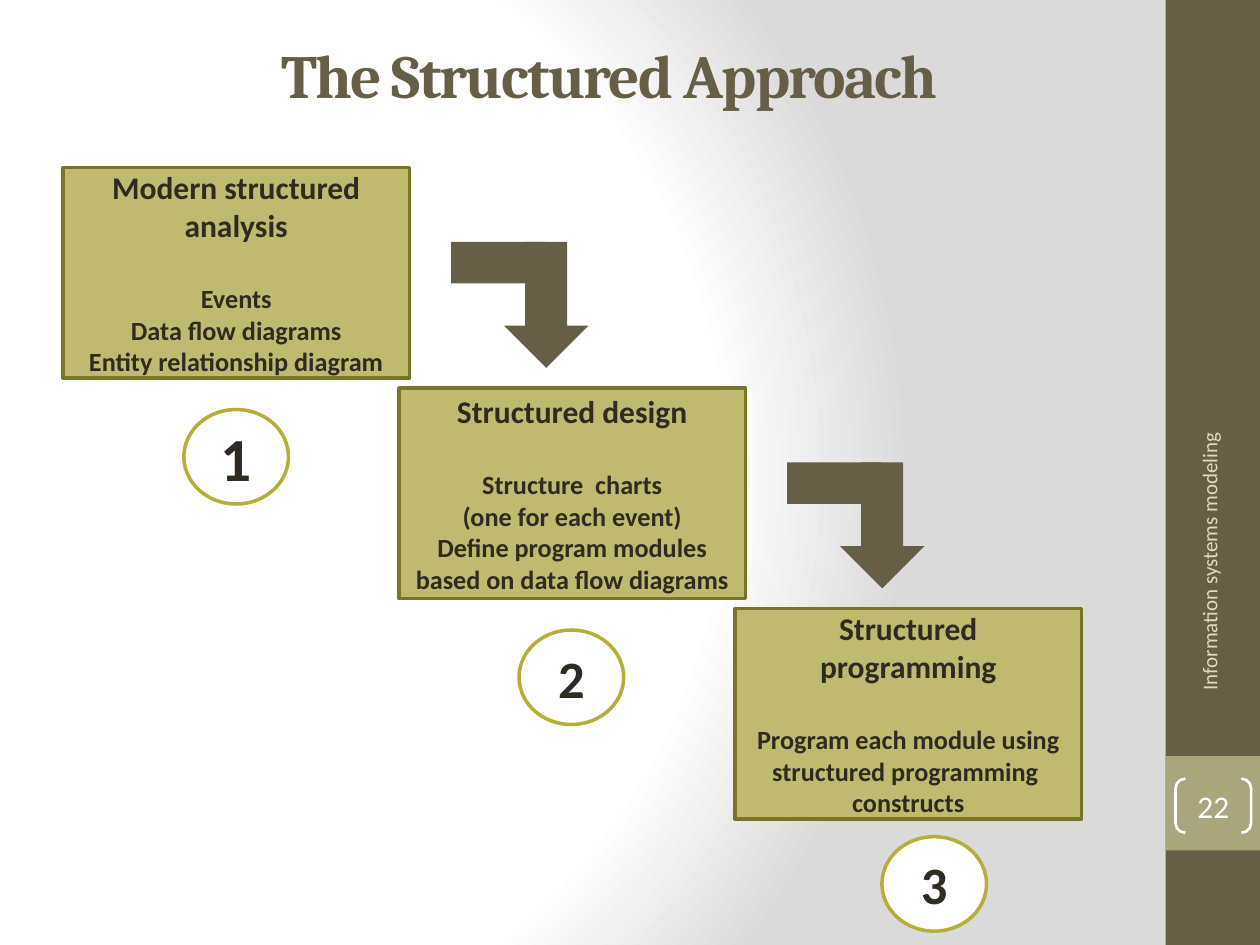
import pptx
import pptx.util
import pptx.oxml
import pptx.oxml.ns
import pptx.dml.color
import pptx.enum.shapes
import pptx.enum.text

Inches = pptx.util.Inches
Pt = pptx.util.Pt
KIND = pptx.enum.shapes.MSO_SHAPE
ALIGN = pptx.enum.text.PP_ALIGN
MIDDLE = pptx.enum.text.MSO_ANCHOR.MIDDLE

COLORS = {
    "brown": "675E47", "sage": "A9A57C", "cream": "DFDCB7",
    "white": "FFFFFF", "grey": "DADADA", "box": "C0BA71",
    "edge": "7A7425", "ring": "B7AE38", "ink": "2F2B20",
}
STEPS = [
    ("Modern structured analysis",
     ["Events", "Data flow diagrams", "Entity relationship diagram"]),
    ("Structured design",
     ["Structure  charts", "(one for each event)",
      "Define program modules based on data flow diagrams"]),
    ("Structured programming",
     ["Program each module using structured programming  constructs"]),
]
RINGS = [(1.46, 3.25, 35), (4.12, 5, 30), (7, 6.64, 30)]
STEP_X = 8 / 3
STEP_Y = 1.75


def color(name):
    return pptx.dml.color.RGBColor.from_string(COLORS[name])


def apply(item, values):
    for key, value in values.items():
        setattr(item, key, value)


def place(item, left, top, width, height):
    box = {"left": left, "top": top, "width": width, "height": height}
    apply(item, {key: Inches(value) for key, value in box.items()})


def add_shape(slide, kind, area, fill=None, line=None, weight=2):
    shape = slide.shapes.add_shape(kind, *map(Inches, area))
    shape.shadow.inherit = False
    if fill:
        shape.fill.solid()
        shape.fill.fore_color.rgb = color(fill)
    else:
        shape.fill.background()
    if line:
        shape.line.color.rgb = color(line)
        shape.line.width = Pt(weight)
    else:
        shape.line.fill.background()
    return shape


def write(shape, lines, tint, align=ALIGN.CENTER, face="Calibri", bold=False):
    frame = shape.text_frame
    apply(frame, {"word_wrap": True, "vertical_anchor": MIDDLE})
    for i, (text, size, gap) in enumerate(lines):
        para = frame.add_paragraph() if i else frame.paragraphs[0]
        apply(para, {"alignment": align, "space_before": Pt(gap)})
        run = para.add_run()
        run.text = text
        apply(run.font, {"name": face, "size": Pt(size), "bold": bold})
        run.font.color.rgb = color(tint)


def add_back(slide):
    stops = "".join(
        f'<a:gs pos="{pos}"><a:srgbClr val="{COLORS[name]}"/></a:gs>'
        for pos, name in [(0, "white"), (75000, "white"), (100000, "grey")])
    back = pptx.oxml.parse_xml(
        f'<p:bg {pptx.oxml.ns.nsdecls("p", "a")}><p:bgPr>'
        f'<a:gradFill rotWithShape="1"><a:gsLst>{stops}</a:gsLst>'
        '<a:path path="circle">'
        '<a:fillToRect l="20000" t="50000" r="100000" b="50000"/>'
        '</a:path></a:gradFill><a:effectLst/></p:bgPr></p:bg>')
    slide.element.cSld.insert(0, back)


def add_title(slide, text):
    title = slide.shapes.title
    place(title, 0.5, 0.17, 8.67, 0.83)
    write(title, [(text, 35, 0)], "brown", face="Cambria", bold=True)
    for props in title.element.iter(pptx.oxml.ns.qn("a:rPr")):
        props.set("spc", "-100")


def add_side(slide):
    add_shape(slide, KIND.RECTANGLE, (9.25, 0, 0.75, 7.5), "brown")
    add_shape(slide, KIND.RECTANGLE, (9.25, 6, 0.75, 0.75), "sage")
    label = slide.shapes.add_textbox(*map(Inches, (8.3, 4.43, 2.59, 0.4)))
    label.rotation = 270
    write(label, [("Information systems modeling", 12, 0)], "cream", ALIGN.RIGHT)
    page = add_shape(slide, KIND.DOUBLE_BRACKET, (9.33, 6.18, 0.6, 0.43),
                     line="white", weight=1.5)
    page.adjustments[0] = 0.18
    sides = ("left", "top", "right", "bottom")
    apply(page.text_frame, {f"margin_{side}": 0 for side in sides})
    write(page, [("22", 18, 0)], "white")


def add_step(slide, i, head, notes):
    area = (0.5 + i * STEP_X, 1.33 + i * STEP_Y, 2.75, 1.67)
    box = add_shape(slide, KIND.RECTANGLE, area, "box", "edge")
    lines = [(head, 18, 0)]
    lines += [(note, 15, 0 if j else 22) for j, note in enumerate(notes)]
    write(box, lines, "ink", bold=True)


def add_arrow(slide, i):
    left, top = 3.58 + i * STEP_X, 1.92 + i * STEP_Y
    add_shape(slide, KIND.DOWN_ARROW, (left + 0.42, top, 0.67, 1), "brown")
    add_shape(slide, KIND.RECTANGLE, (left, top, 0.75, 0.33), "brown")


def add_ring(slide, i, left, top, size):
    ring = add_shape(slide, KIND.OVAL, (left, top, 0.83, 0.75), "white", "ring")
    write(ring, [(str(i + 1), size, 0)], "ink", bold=True)


def main():
    deck = pptx.Presentation()
    apply(deck, {"slide_width": Inches(10), "slide_height": Inches(7.5)})
    slide = deck.slides.add_slide(deck.slide_layouts[5])
    add_back(slide)
    add_side(slide)
    add_title(slide, "The Structured Approach")
    for i, (head, notes) in enumerate(STEPS):
        add_step(slide, i, head, notes)
    for i in range(len(STEPS) - 1):
        add_arrow(slide, i)
    for i, ring in enumerate(RINGS):
        add_ring(slide, i, *ring)
    deck.save("out.pptx")


if __name__ == "__main__":
    main()
